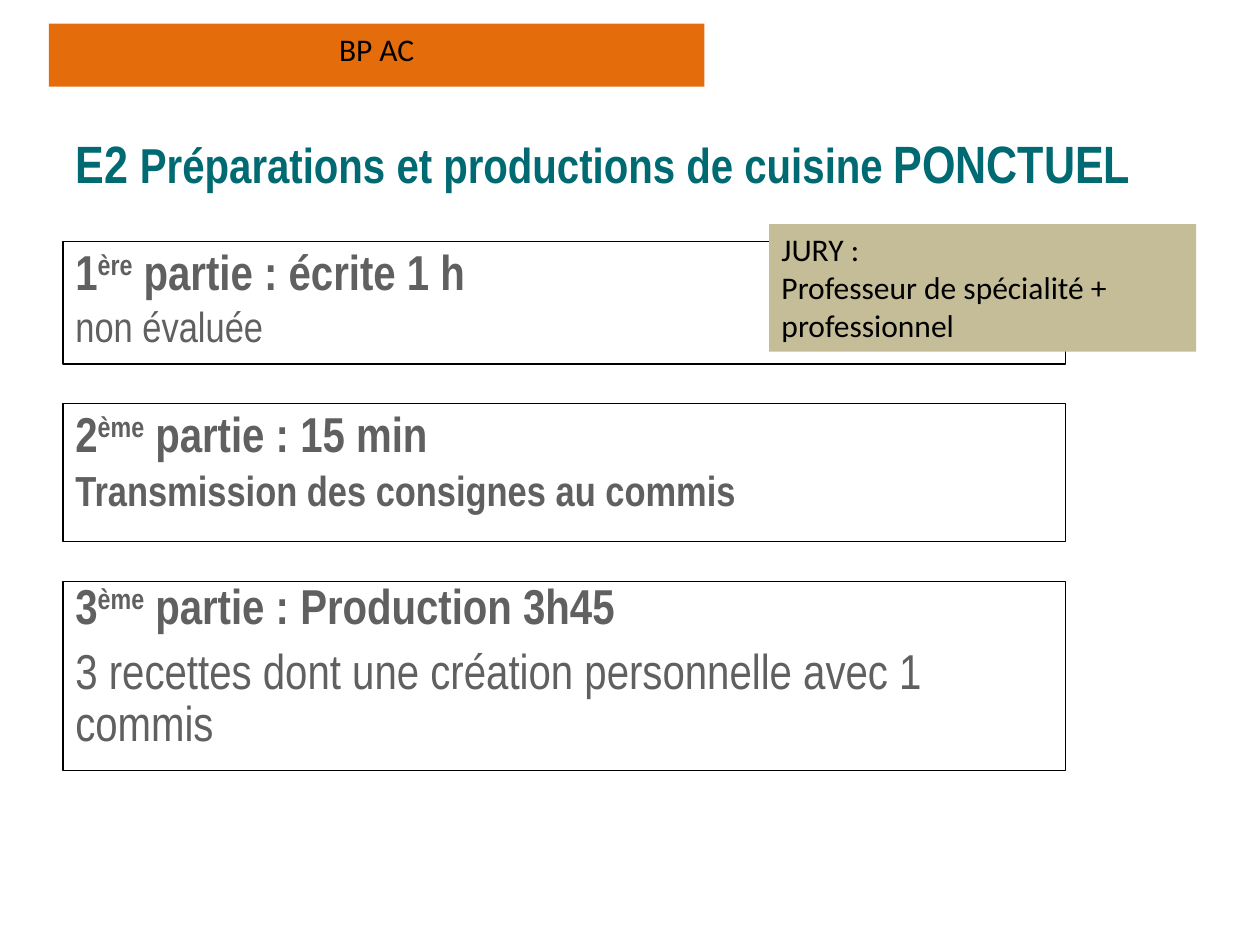
"""Build the slide describing the three parts of the E2 cooking exam."""
from dataclasses import dataclass

from pptx import Presentation
from pptx import util as u
from pptx.dml.color import RGBColor
from pptx.enum import shapes, text


@dataclass(frozen=True)
class Theme:
    heading_font: str = "Arial Narrow"
    body_font: str = "Calibri"
    title: str = "006A72"
    grey: str = "606060"
    black: str = "000000"
    banner: str = "E46C0A"
    jury: str = "C4BD97"
    emphasis: int = 30
    large: int = 28
    medium: int = 24
    small: int = 18


THEME = Theme()

TITLE = [
    ("E2 ", THEME.emphasis),
    ("Préparations et productions de cuisine ", THEME.large),
    ("PONCTUEL", THEME.emphasis),
]
BANNER = ["BP AC"]
JURY = ["JURY :", "Professeur de spécialité + professionnel"]
PARTS = [
    {"top": 138, "height": 70, "heading": ("1", "ère", " partie : écrite 1 h"),
     "detail": "non évaluée", "size": THEME.medium, "bold": False,
     "spacing": (None, None), "before": 0},
    {"top": 230.5, "height": 79, "heading": ("2", "ème", " partie : 15 min"),
     "detail": "Transmission des consignes au commis", "size": THEME.medium,
     "bold": True, "spacing": (None, 30), "before": 0},
    {"top": 332.5, "height": 108, "heading": ("3", "ème", " partie : Production 3h45"),
     "detail": "3 recettes dont une création personnelle avec 1 commis",
     "size": THEME.large, "bold": False, "spacing": (30, 30), "before": 7},
]
PART_LEFT, PART_WIDTH = 36, 573


def style(paragraph, font, size, color, bold=False, spacing=None, before=0):
    paragraph.font.name = font
    paragraph.font.size = u.Pt(size)
    paragraph.font.bold = bold
    paragraph.font.color.rgb = RGBColor.from_string(color)
    paragraph.space_before = u.Pt(before)
    if spacing:
        paragraph.line_spacing = u.Pt(spacing)


def add_box(slide, left, top, width, height, fill=None, line=None, inset=3.6):
    shape = slide.shapes.add_shape(
        shapes.MSO_SHAPE.RECTANGLE, *map(u.Pt, (left, top, width, height)))
    shape.shadow.inherit = False
    if fill:
        shape.fill.solid()
        shape.fill.fore_color.rgb = RGBColor.from_string(fill)
    else:
        shape.fill.background()
    if line:
        shape.line.color.rgb = RGBColor.from_string(line)
        shape.line.width = u.Pt(0.75)
    else:
        shape.line.fill.background()
    frame = shape.text_frame
    frame.word_wrap = True
    frame.vertical_anchor = text.MSO_ANCHOR.TOP
    frame.margin_top = frame.margin_bottom = u.Pt(inset)
    return frame


def add_label(slide, lines, bounds, fill, alignment):
    frame = add_box(slide, *bounds, fill=fill)
    for index, line in enumerate(lines):
        paragraph = frame.add_paragraph() if index else frame.paragraphs[0]
        paragraph.text = line
        paragraph.alignment = alignment
        style(paragraph, THEME.body_font, THEME.small, THEME.black)


def add_title(slide):
    frame = slide.shapes.add_textbox(*map(u.Pt, (36, 54, 648, 81))).text_frame
    frame.word_wrap = True
    frame.vertical_anchor = text.MSO_ANCHOR.MIDDLE
    frame.margin_top = frame.margin_bottom = 0
    paragraph = frame.paragraphs[0]
    for words, size in TITLE:
        run = paragraph.add_run()
        run.text = words
        run.font.size = u.Pt(size)
    style(paragraph, THEME.heading_font, THEME.large, THEME.title, True, 33)


def add_part(slide, part):
    frame = add_box(slide, PART_LEFT, part["top"], PART_WIDTH, part["height"],
                    line=THEME.black, inset=0)
    heading = frame.paragraphs[0]
    heading.alignment = text.PP_ALIGN.LEFT
    for words in part["heading"]:
        heading.add_run().text = words
    heading.runs[1].font._element.set("baseline", "30000")
    heading_spacing, detail_spacing = part["spacing"]
    style(heading, THEME.heading_font, THEME.large, THEME.grey, True, heading_spacing)

    detail = frame.add_paragraph()
    detail.text = part["detail"]
    detail.alignment = text.PP_ALIGN.LEFT
    style(detail, THEME.heading_font, part["size"], THEME.grey, part["bold"],
          detail_spacing, part["before"])


def main():
    presentation = Presentation()
    presentation.slide_width, presentation.slide_height = u.Pt(720), u.Pt(540)
    slide = presentation.slides.add_slide(presentation.slide_layouts[6])
    add_title(slide)
    add_label(slide, BANNER, (28, 13.5, 374.5, 36), THEME.banner, text.PP_ALIGN.CENTER)
    for part in PARTS:
        add_part(slide, part)
    add_label(slide, JURY, (439.5, 128, 244, 73), THEME.jury, text.PP_ALIGN.LEFT)
    presentation.save("out.pptx")


if __name__ == "__main__":
    main()
